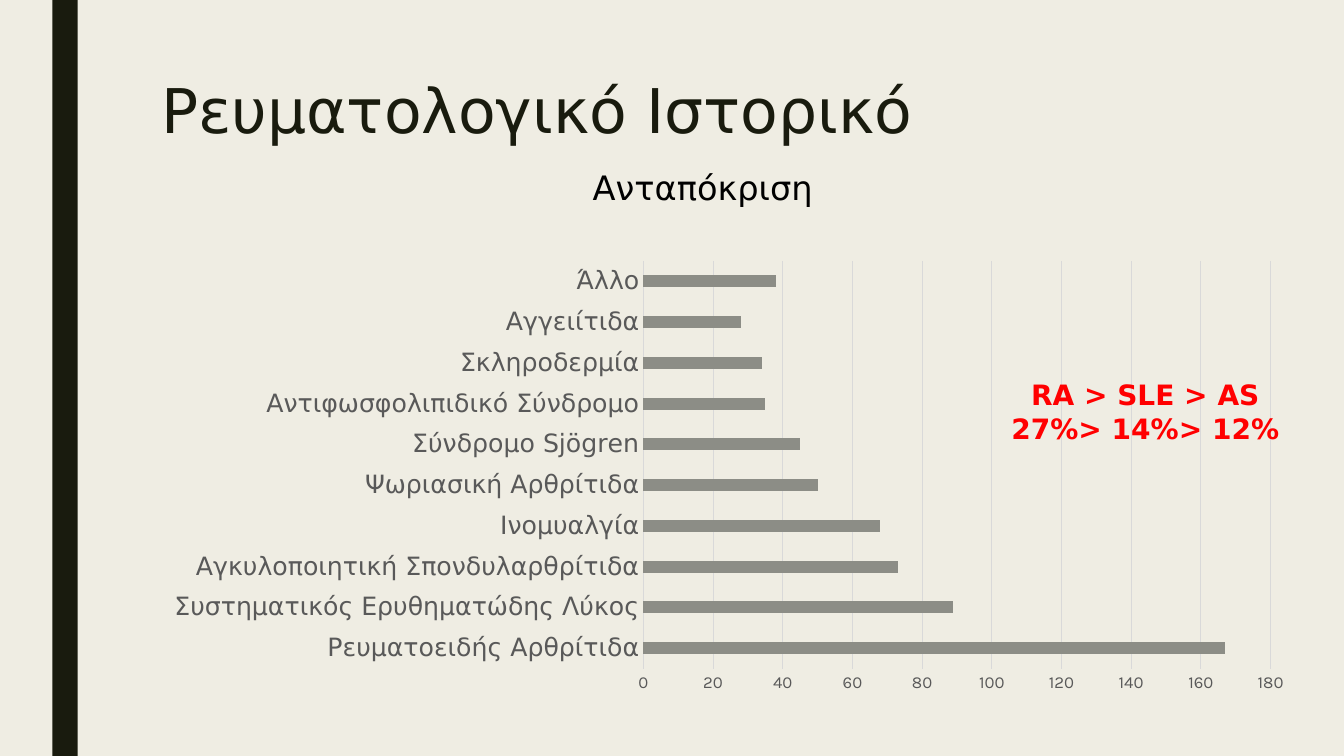
import pptx
import pptx.chart.data
import pptx.dml.color
import pptx.enum.chart
import pptx.enum.text
import pptx.util
from pptx.util import Inches

CASES = [
    ("Ρευματοειδής Αρθρίτιδα", 167),
    ("Συστηματικός Ερυθηματώδης Λύκος", 89),
    ("Αγκυλοποιητική Σπονδυλαρθρίτιδα", 73),
    ("Ινομυαλγία", 68),
    ("Ψωριασική Αρθρίτιδα", 50),
    ("Σύνδρομο Sjögren", 45),
    ("Αντιφωσφολιπιδικό Σύνδρομο", 35),
    ("Σκληροδερμία", 34),
    ("Αγγειίτιδα", 28),
    ("Άλλο", 38),
]


def color(code):
    return pptx.dml.color.RGBColor.from_string(code)


class Theme:
    paper = color("EFEDE3")
    ink = color("191B0E")
    black = color("000000")
    red = color("FF0000")
    label = color("595959")
    grid = color("D9D9D9")
    bar = color("8C8D86")
    sans = "DejaVu Sans"
    digit = "Karla"
    title = 44
    head = 24
    note = 20
    group = 18
    scale = 12
    base = 10


class Deck:
    """Holds the theme and the slide being drawn."""

    def __init__(self, theme):
        self.theme = theme
        self.file = pptx.Presentation()
        self.file.slide_width = Inches(13.33)
        self.file.slide_height = Inches(7.5)
        self.slide = self.file.slides.add_slide(self.file.slide_layouts[6])
        self.paint(self.slide.background, theme.paper)

    def paint(self, item, tint):
        item.fill.solid()
        item.fill.fore_color.rgb = tint

    def style(self, font, size, tint, face, bold=False):
        font.size = pptx.util.Pt(size)
        font.color.rgb = tint
        font.name = face
        font.bold = bold

    def band(self, left, top, width, height):
        shape = self.slide.shapes.add_shape(
            pptx.enum.shapes.MSO_SHAPE.RECTANGLE,
            Inches(left), Inches(top), Inches(width), Inches(height))
        shape.shadow.inherit = False
        shape.line.fill.background()
        self.paint(shape, self.theme.ink)

    def text(self, box, lines, size, tint, align, bold=False, space=None):
        """Write lines as one paragraph, with a line break between them."""
        frame = self.slide.shapes.add_textbox(*map(Inches, box)).text_frame
        frame.word_wrap = True
        para = frame.paragraphs[0]
        para.alignment = align
        para.line_spacing = space
        for index, line in enumerate(lines):
            if index:
                para.add_line_break()
            run = para.add_run()
            run.text = line
            self.style(run.font, size, tint, self.theme.sans, bold)

    def chart(self, box, cases):
        theme = self.theme
        data = pptx.chart.data.CategoryChartData()
        data.categories = [name for name, count in cases]
        data.add_series("Series 1", [count for name, count in cases])
        chart = self.slide.shapes.add_chart(
            pptx.enum.chart.XL_CHART_TYPE.BAR_CLUSTERED,
            *map(Inches, box), data).chart
        chart.has_legend = False
        chart.has_title = False
        self.style(chart.font, theme.base, theme.black, theme.digit)

        plot = chart.plots[0]
        plot.gap_width = 235
        plot.vary_by_categories = False
        self.paint(plot.series[0].format, theme.bar)

        group, scale = chart.category_axis, chart.value_axis
        for axis in (group, scale):
            axis.major_tick_mark = pptx.enum.chart.XL_TICK_MARK.NONE
            axis.minor_tick_mark = pptx.enum.chart.XL_TICK_MARK.NONE
        self.style(group.tick_labels.font, theme.group, theme.label, theme.sans)
        self.style(scale.tick_labels.font, theme.scale, theme.label, theme.digit)
        scale.minimum_scale = 0
        scale.maximum_scale = 180
        scale.major_unit = 20
        scale.has_major_gridlines = True
        scale.format.line.fill.background()
        for line in (group.format.line, scale.major_gridlines.format.line):
            line.color.rgb = theme.grid
            line.width = pptx.util.Pt(0.75)


def main():
    theme = Theme()
    deck = Deck(theme)
    left = pptx.enum.text.PP_ALIGN.LEFT
    center = pptx.enum.text.PP_ALIGN.CENTER
    deck.band(0.52, 0, 0.25, 7.5)
    deck.text((1.5, 0.75, 10.5, 1.62), ["Ρευματολογικό Ιστορικό"],
              theme.title, theme.ink, left, space=0.89)
    deck.chart((1.5, 2.5, 11.46, 4.46), CASES)
    deck.text((4.5, 1.61, 4.94, 0.5), ["Ανταπόκριση"],
              theme.head, theme.black, center)
    deck.text((9.76, 3.7, 3.2, 0.77), ["RA > SLE > AS", "27%> 14%> 12%"],
              theme.note, theme.red, center, bold=True)
    deck.file.save("out.pptx")


if __name__ == "__main__":
    main()
